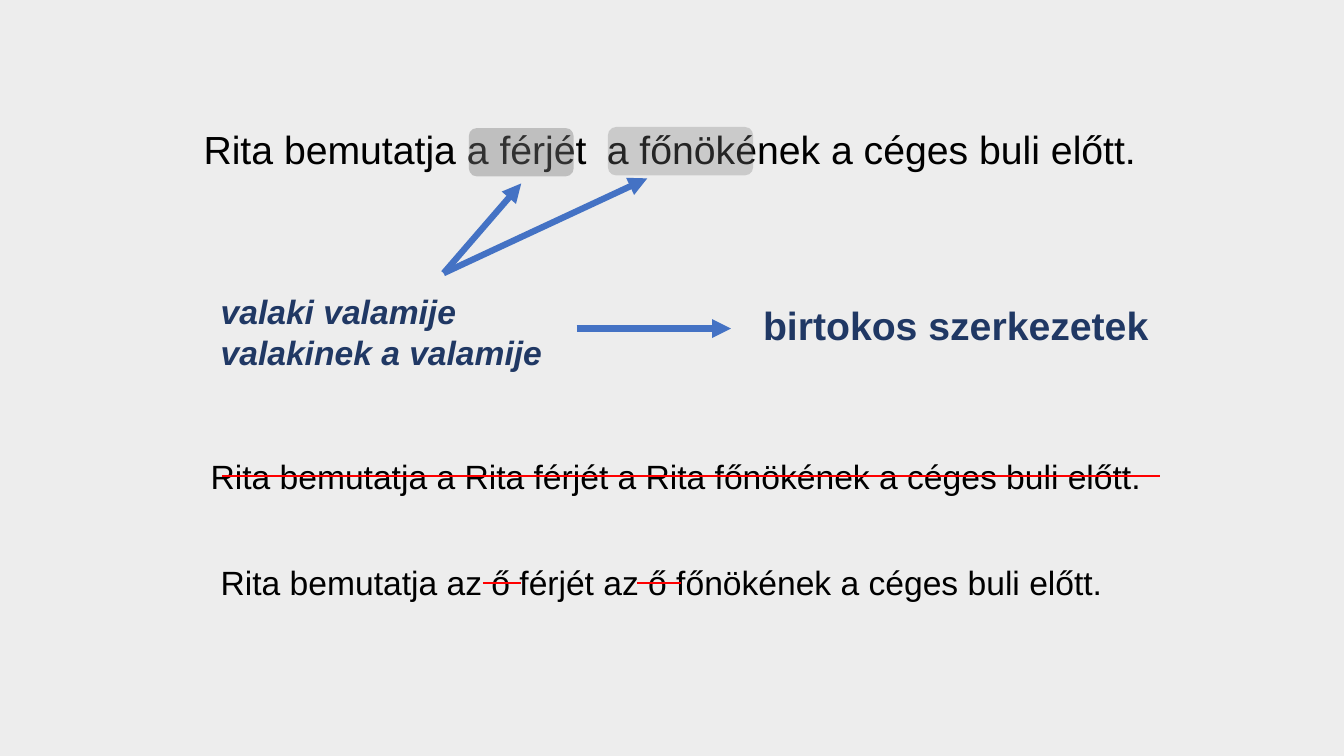
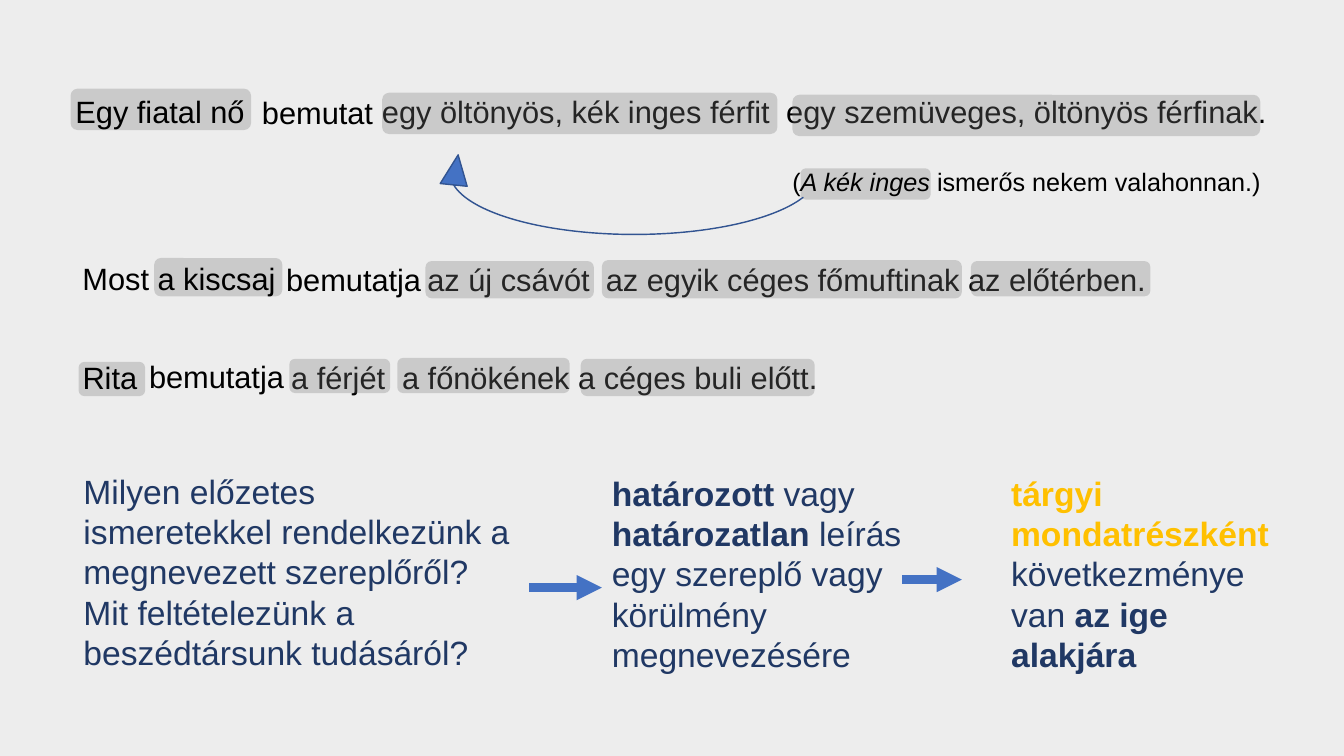
from dataclasses import dataclass
from lxml.etree import SubElement as Sub
from pptx import Presentation
from pptx.dml.color import RGBColor as RGB
from pptx.enum.shapes import MSO_CONNECTOR as Link, MSO_SHAPE as Shape
from pptx.enum.text import MSO_AUTO_SIZE as Fit
from pptx.oxml.ns import qn
from pptx.util import Emu, Pt

PX = 9144


@dataclass(frozen=True)
class Theme:
    font: str = "Arial"
    back: str = "EDEDED"
    ink: str = "000000"
    navy: str = "203864"
    gold: str = "FFC000"
    blue: str = "4472C4"
    edge: str = "325491"
    red: str = "FF0000"
    grey: str = "7C7C7C"
    head: int = 28
    body: int = 24
    text: int = 22
    note: int = 18


T = Theme()

FIRST = {
    "lines": [
        ((192, 114, 949, 94), "Rita bemutatja a férjét\ta főnökének a céges buli előtt.", T.head, 400),
    ],
    "marks": [((465, 127, 104, 48), 40), ((603, 126, 144, 48), 30)],
    "labels": [
        ((209, 284, 351, 91), [[("valaki valamije", "bi")], [("valakinek a valamije", "bi")]], T.body, T.navy),
        ((747, 294, 407, 57), [[("birtokos szerkezetek", "b")]], T.head, T.navy),
        ((199, 447, 952, 50), [[("Rita bemutatja a Rita férjét a Rita főnökének a céges buli előtt.", "")]], T.body, T.ink),
        ((209, 553, 904, 50), [[("Rita bemutatja az ő férjét az ő főnökének a céges buli előtt.", "")]], T.body, T.ink),
    ],
    "arrows": [(440, 271, 517, 182), (440, 271, 642, 177), (572, 326, 725, 326)],
    "weight": 4.5,
    "strikes": [(220, 1151, 472), (479, 517, 578), (632, 675, 578)],
}

SECOND = {
    "lines": [
        ((369, 82, 924, 78), "egy öltönyös, kék inges férfit\tegy szemüveges, öltönyös férfinak.", T.text, 401),
        ((414, 249, 882, 94), "az új csávót\taz egyik céges főmuftinak az előtérben.", T.text, 177),
        ((279, 346, 962, 94), "a férjét\ta főnökének a céges buli előtt.", T.text, 110),
    ],
    "marks": [(box, 30) for box in (
        (70, 88, 179, 41), (379, 92, 392, 41), (786, 94, 464, 41),
        (153, 256, 127, 38), (422, 259, 167, 37), (597, 258, 357, 38), (963, 259, 178, 35),
        (78, 359, 66, 34), (287, 356, 100, 34), (394, 355, 171, 35), (576, 356, 232, 37),
        (794, 167, 129, 31),
    )],
    "labels": [
        ((776, 160, 489, 40), [[("(", ""), ("A kék inges ", "i"), ("ismerős nekem valahonnan.)", "")]], T.note, T.ink),
    ] + [(box, [[(word, "")]], T.text, T.ink) for box, word in (
        ((65, 87, 190, 47), "Egy fiatal nő"),
        ((250, 88, 132, 47), "bemutat"),
        ((72, 253, 214, 47), "Most a kiscsaj"),
        ((274, 254, 156, 47), "bemutatja"),
        ((72, 351, 75, 47), "Rita"),
        ((138, 350, 156, 47), "bemutatja"),
    )],
    "blocks": [
        ((73, 462, 444, 212), [
            [("Milyen előzetes ismeretekkel rendelkezünk a megnevezett szereplőről?", "")],
            [("Mit feltételezünk a beszédtársunk tudásáról?", "")],
        ]),
        ((597, 464, 316, 212), [[
            ("határozott", "b"), (" vagy ", ""), ("határozatlan", "b"),
            (" leírás egy szereplő vagy körülmény megnevezésére", ""),
        ]]),
        ((993, 464, 278, 212), [[
            ("tárgyi mondatrészként ", "bg"), ("következménye van ", ""), ("az ige alakjára", "b"),
        ]]),
    ],
    "arrows": [(525, 583, 597, 583), (895, 575, 954, 575)],
    "weight": 6,
    "loop": ((433, 97, 392, 149), (0, 5.79, 213.71, 112.98, 0.09)),
}


def px(*nums):
    return [Emu(n * PX) for n in nums]


def write(slide, box, paras, size, color, wrap=True, grow=True):
    frame = slide.shapes.add_textbox(*px(*box)).text_frame
    frame.word_wrap = wrap
    frame.auto_size = Fit.SHAPE_TO_FIT_TEXT if grow else Fit.NONE
    for i, runs in enumerate(paras):
        para = frame.paragraphs[0] if i == 0 else frame.add_paragraph()
        font = para.font
        font.name, font.size = T.font, Pt(size)
        font.color.rgb = RGB.from_string(color)
        flags = {flag for _, flag in runs}
        same = len(flags) == 1
        if same:
            style(font, runs[0][1])
        for text, flag in runs:
            run = para.add_run()
            run.text = text
            if not same:
                style(run.font, flag)
    return frame


def style(font, flag):
    if "b" in flag:
        font.bold = True
    if "i" in flag:
        font.italic = True
    if "g" in flag:
        font.color.rgb = RGB.from_string(T.gold)


def row(slide, box, text, size, stop):
    frame = write(slide, box, [[(text, "")]], size, T.ink, grow=False)
    frame.margin_top = frame.margin_bottom = Emu(10 * PX)
    props = frame.paragraphs[0]._p.get_or_add_pPr()
    tabs = props.makeelement(qn("a:tabLst"), {})
    Sub(tabs, qn("a:tab"), pos=str(stop * PX), algn="l")
    props.insert(0, tabs)


def mark(slide, box, alpha):
    shape = slide.shapes.add_shape(Shape.ROUNDED_RECTANGLE, *px(*box))
    shape.shadow.inherit = False
    shape.fill.solid()
    shape.fill.fore_color.rgb = RGB.from_string(T.grey)
    shape.line.fill.background()
    tone = shape._element.spPr.find(qn("a:solidFill"))[0]
    Sub(tone, qn("a:alpha"), val=str(alpha * 1000))


def line(slide, ends, color, width, head=False):
    link = slide.shapes.add_connector(Link.STRAIGHT, *px(*ends))
    link.line.color.rgb = RGB.from_string(color)
    link.line.width = Pt(width)
    if head:
        Sub(link.line._get_or_add_ln(), qn("a:tailEnd"), type="triangle")
    Sub(link._element.spPr, qn("a:effectLst"))


def loop(slide, box, bends):
    shape = slide.shapes.add_shape(Shape.CIRCULAR_ARROW, *px(*box))
    shape.shadow.inherit = False
    shape.rotation = 180
    for i, bend in enumerate(bends):
        shape.adjustments[i] = bend
    shape.fill.solid()
    shape.fill.fore_color.rgb = RGB.from_string(T.blue)
    shape.line.color.rgb = RGB.from_string(T.edge)
    shape.line.width = Pt(1)


def build(deck, data):
    slide = deck.slides.add_slide(deck.slide_layouts[6])
    fill = slide.background.fill
    fill.solid()
    fill.fore_color.rgb = RGB.from_string(T.back)
    for item in data["lines"]:
        row(slide, *item)
    for item in data["marks"]:
        mark(slide, *item)
    if "loop" in data:
        loop(slide, *data["loop"])
    for item in data["labels"]:
        write(slide, *item, wrap=False)
    for box, paras in data.get("blocks", []):
        write(slide, box, paras, T.body, T.navy)
    for ends in data["arrows"]:
        line(slide, ends, T.blue, data["weight"], head=True)
    for left, right, y in data.get("strikes", []):
        line(slide, (left, y, right, y), T.red, 1.5)


def main():
    deck = Presentation()
    deck.slide_width, deck.slide_height = px(1333, 750)
    for data in (FIRST, SECOND):
        build(deck, data)
    deck.save("out.pptx")


if __name__ == "__main__":
    main()
